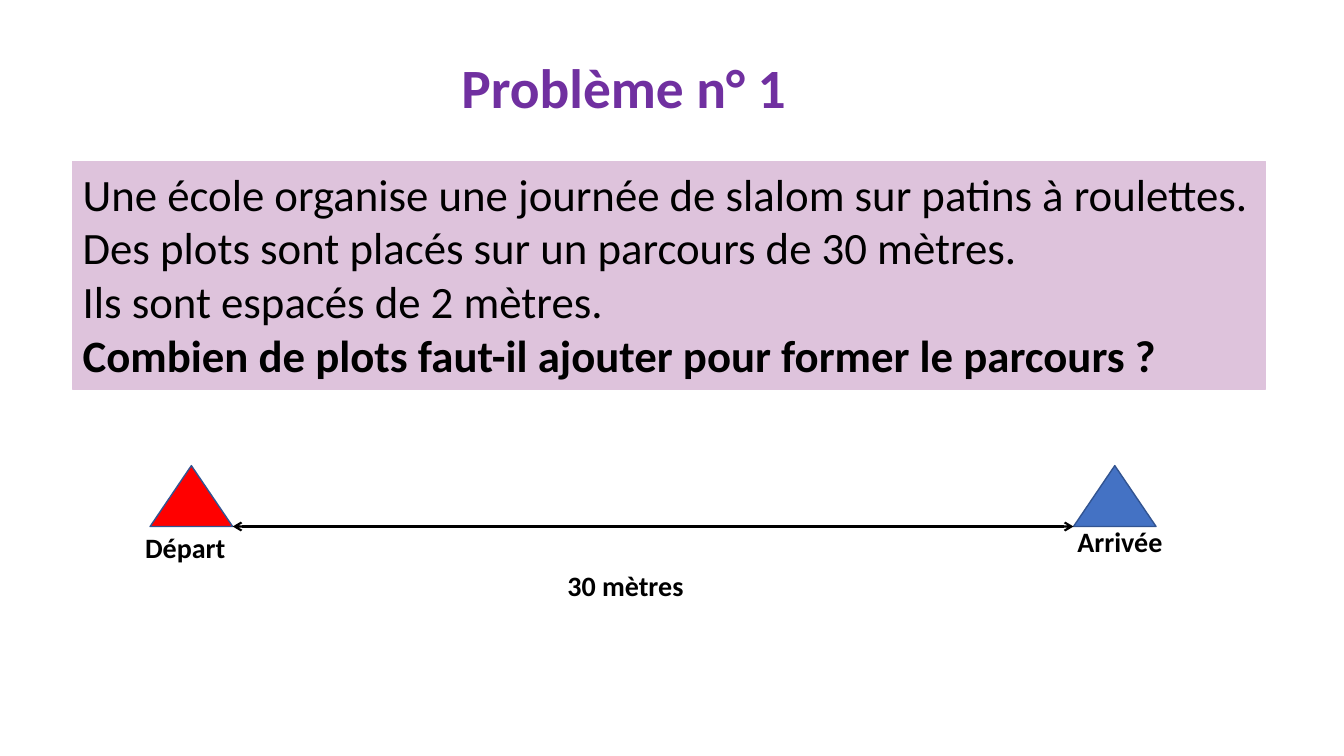
from lxml import etree
from pptx import Presentation
from pptx.dml.color import RGBColor
from pptx.enum.shapes import MSO_CONNECTOR, MSO_SHAPE
from pptx.enum.text import MSO_ANCHOR, PP_ALIGN
from pptx.oxml.ns import qn
from pptx.util import Pt

RECT = MSO_SHAPE.RECTANGLE
CONE = MSO_SHAPE.ISOSCELES_TRIANGLE
LINE = MSO_CONNECTOR.STRAIGHT
TOP, MIDDLE = MSO_ANCHOR.TOP, MSO_ANCHOR.MIDDLE
LEFT = PP_ALIGN.LEFT

COLORS = {
    "title": "7030A0",
    "panel": "DEC3DC",
    "start": "FF0000",
    "end": "4472C4",
    "edge": "325491",
    "ink": "000000",
}


def write(shape, *lines, size=20, color="ink", bold=(True,), wrap=False,
          anchor=TOP, spacing=1.0):
    """Fill a shape with one paragraph per line; bold has one flag per line."""
    frame = shape.text_frame
    frame.word_wrap = wrap
    frame.vertical_anchor = anchor
    for i, (line, flag) in enumerate(zip(lines, bold)):
        para = frame.paragraphs[0] if i == 0 else frame.add_paragraph()
        para.alignment = LEFT
        para.line_spacing = spacing
        run = para.add_run()
        run.text = line
        run.font.name = "Calibri"
        run.font.size = Pt(size)
        run.font.bold = flag
        run.font.color.rgb = RGBColor.from_string(COLORS[color])


def draw(kind, x, y, w, h, fill, edge):
    shape = shapes.add_shape(kind, Pt(x), Pt(y), Pt(w), Pt(h))
    shape.shadow.inherit = False
    shape.fill.solid()
    shape.fill.fore_color.rgb = RGBColor.from_string(COLORS[fill])
    shape.line.color.rgb = RGBColor.from_string(COLORS[edge])
    shape.line.width = Pt(1)
    return shape


deck = Presentation()
deck.slide_width, deck.slide_height = Pt(960), Pt(540)
slide = deck.slides.add_slide(deck.slide_layouts[6])
shapes = slide.shapes

# Title and problem
title = shapes.add_textbox(Pt(322.5), Pt(42.5), Pt(413), Pt(44))
write(title, "Problème n° 1", size=39.6, color="title", wrap=True,
      anchor=MIDDLE, spacing=0.9)

panel = draw(RECT, 52, 115.2, 851.8, 162.7, "panel", "panel")
write(
    panel,
    "Une école organise une journée de slalom sur patins à roulettes.",
    "Des plots sont placés sur un parcours de 30 mètres.",
    "Ils sont espacés de 2 mètres.",
    "Combien de plots faut-il ajouter pour former le parcours ?",
    size=32, bold=(False, False, False, True), wrap=True,
)

# Course: a cone at each end and the distance between them
CONE_W, CONE_H, CONE_Y = 59, 43.5, 332.6
START_X, END_X = 107.2, 766.8
BASE = CONE_Y + CONE_H
for x, fill in ((START_X, "start"), (END_X, "end")):
    draw(CONE, x, CONE_Y, CONE_W, CONE_H, fill, "edge")

span = shapes.add_connector(LINE, Pt(START_X + CONE_W), Pt(BASE),
                            Pt(END_X), Pt(BASE))
span.line.color.rgb = RGBColor.from_string(COLORS["ink"])
span.line.width = Pt(1.5)
ends = span.line._get_or_add_ln()
for tag in ("a:headEnd", "a:tailEnd"):
    etree.SubElement(ends, qn(tag)).set("type", "arrow")
etree.SubElement(span._element.spPr, qn("a:effectLst"))

for name, x, y, w in (
    ("Départ", 96.5, 375.2, 72.7),
    ("Arrivée", 762.5, 370.9, 75.6),
    ("30 mètres", 398.2, 402.5, 97.9),
):
    write(shapes.add_textbox(Pt(x), Pt(y), Pt(w), Pt(31.5)), name)

deck.save("out.pptx")
